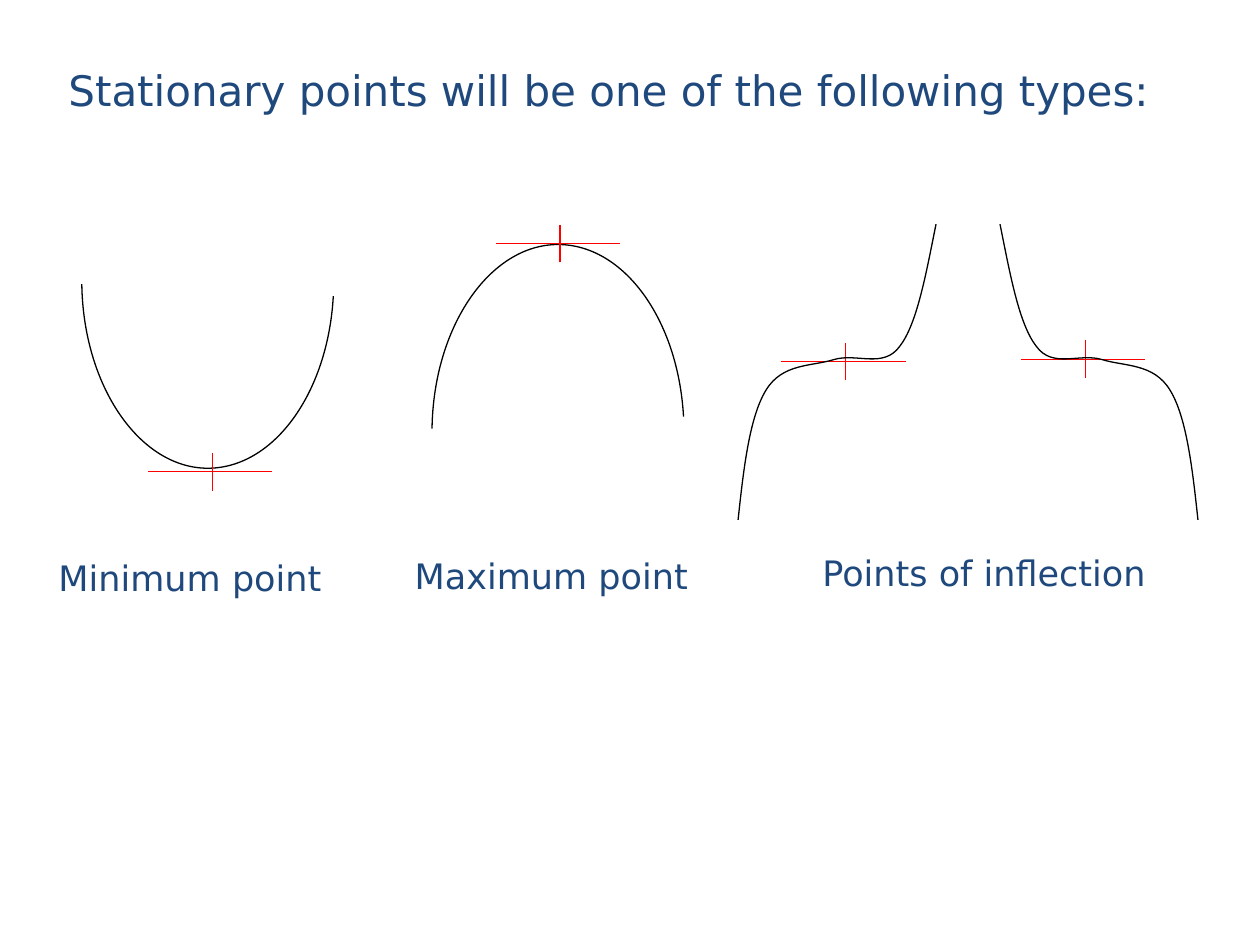
import dataclasses

import pptx
import pptx.dml.color
import pptx.enum.shapes
import pptx.enum.text
import pptx.oxml.ns
import pptx.util
from lxml import etree

Cm = pptx.util.Cm
Pt = pptx.util.Pt
qn = pptx.oxml.ns.qn


@dataclasses.dataclass(frozen=True)
class Theme:
    font: str = "DejaVu Sans"
    text: str = "1F497D"
    curve: str = "000000"
    cross: str = "FF0000"
    title_size: int = 24
    label_size: int = 20
    line_width: float = 0.75


class SlideWriter:
    def __init__(self, page, theme):
        self.page = page
        self.theme = theme

    def style_line(self, line, color):
        line.color.rgb = pptx.dml.color.RGBColor.from_string(color)
        line.width = Pt(self.theme.line_width)

    def text(self, wording, left, top, width, height, size):
        box = self.page.shapes.add_textbox(Cm(left), Cm(top), Cm(width), Cm(height))
        frame = box.text_frame
        frame.word_wrap = True
        frame.auto_size = pptx.enum.text.MSO_AUTO_SIZE.SHAPE_TO_FIT_TEXT
        para = frame.paragraphs[0]
        span = para.add_run()
        span.text = wording
        span.font.name = self.theme.font
        span.font.size = Pt(size)
        span.font.color.rgb = pptx.dml.color.RGBColor.from_string(self.theme.text)

    def curve(self, points):
        """Joined cubic curves: a start, then two handles and an end for each."""
        spots = [(Cm(x), Cm(y)) for x, y in points]
        builder = self.page.shapes.build_freeform(*spots[0])
        builder.add_line_segments(spots[3::3], close=False)
        shape = builder.convert_to_shape()
        shape.shadow.inherit = False
        shape.fill.background()
        self.style_line(shape.line, self.theme.curve)

        # Bend each straight segment by its two handles
        segments = list(shape._element.iter(qn("a:lnTo")))
        for index, segment in enumerate(segments):
            bend = etree.Element(qn("a:cubicBezTo"))
            for x, y in spots[3 * index + 1:3 * index + 4]:
                etree.SubElement(bend, qn("a:pt"),
                                 x=str(x - shape.left), y=str(y - shape.top))
            segment.getparent().replace(segment, bend)

    def line(self, shapes, x1, y1, x2, y2):
        connector = shapes.add_connector(
            pptx.enum.shapes.MSO_CONNECTOR.STRAIGHT, Cm(x1), Cm(y1), Cm(x2), Cm(y2))
        self.style_line(connector.line, self.theme.cross)
        etree.SubElement(connector._element.spPr, qn("a:effectLst"))

    def cross(self, x, y):
        group = self.page.shapes.add_group_shape()
        self.line(group.shapes, x - 1.3, y, x + 1.21, y)
        self.line(group.shapes, x, y + 0.38, x, y - 0.38)


def main():
    deck = pptx.Presentation()
    deck.slide_width, deck.slide_height = Cm(25.4), Cm(19.05)
    theme = Theme()
    writer = SlideWriter(deck.slides.add_slide(deck.slide_layouts[6]), theme)

    # Title
    writer.text("Stationary points will be one of the following types:",
                1.13, 1.17, 23.47, 1.27, theme.title_size)

    # Maximum, and the minimum as its upside-down twin
    maximum = [
        (8.71, 8.64),
        (8.74, 6.58), (9.88, 4.93), (11.25, 4.93),
        (12.57, 4.93), (13.67, 6.43), (13.78, 8.4),
    ]
    writer.curve(maximum)
    writer.curve([(x - 7.06, 14.37 - y) for x, y in maximum])

    # Crosses at the stationary points
    for x, y in [(4.28, 9.51), (11.29, 4.91), (17.05, 7.29), (21.88, 7.24)]:
        writer.cross(x, y)

    # Labels
    for wording, left, top, width in [
        ("Minimum point", 0.93, 11.1, 5.92),
        ("Maximum point", 8.11, 11.05, 6.32),
        ("Points of inflection", 16.33, 11, 7.21),
    ]:
        writer.text(wording, left, top, width, 1.09, theme.label_size)

    # Rising inflection, and the falling one as its left-right twin
    rising = [
        (14.88, 10.48),
        (14.99, 9.45), (15.11, 8.41), (15.44, 7.87),
        (15.77, 7.32), (16.36, 7.39), (16.81, 7.25),
        (17.27, 7.11), (17.81, 7.44), (18.14, 6.98),
        (18.49, 6.53), (18.67, 5.51), (18.87, 4.52),
    ]
    writer.curve(rising)
    writer.curve([(39.03 - x, y) for x, y in rising])

    deck.save("out.pptx")


if __name__ == "__main__":
    main()
